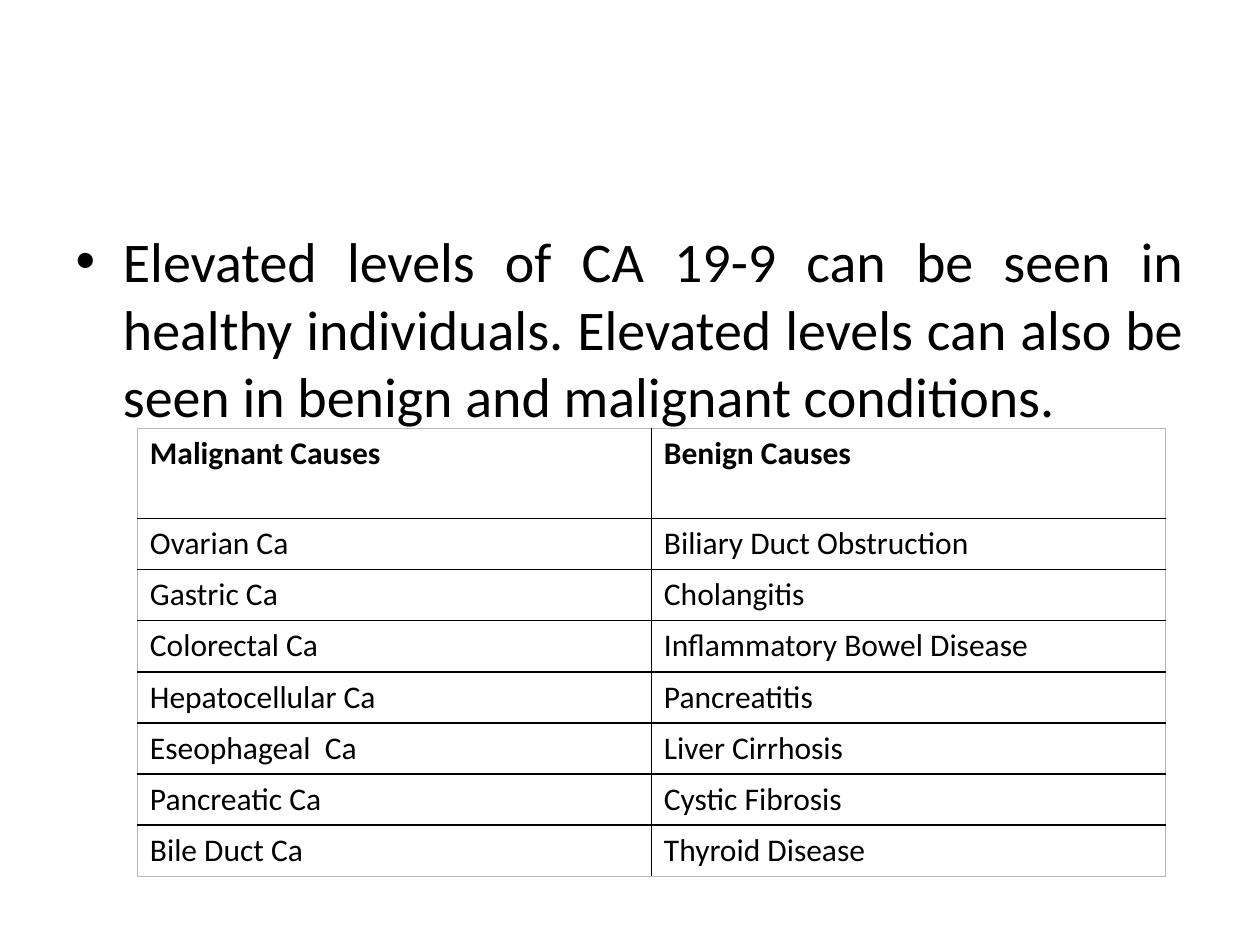
from lxml import etree
from pptx import Presentation
from pptx.dml.color import RGBColor
from pptx.enum.text import MSO_ANCHOR, PP_ALIGN
from pptx.oxml.ns import qn
from pptx.util import Pt

JUSTIFY = PP_ALIGN.JUSTIFY
TOP = MSO_ANCHOR.TOP
COLORS = {"text": "000000", "rule": "000000", "frame": "B8B8B8", "page": "FFFFFF"}
CAUSES = [
    ("Malignant Causes", "Benign Causes"),
    ("Ovarian Ca", "Biliary Duct Obstruction"),
    ("Gastric Ca", "Cholangitis"),
    ("Colorectal Ca", "Inflammatory Bowel Disease"),
    ("Hepatocellular Ca", "Pancreatitis"),
    ("Eseophageal  Ca", "Liver Cirrhosis"),
    ("Pancreatic Ca", "Cystic Fibrosis"),
    ("Bile Duct Ca", "Thyroid Disease"),
]


class SlideBuilder:
    font = "Calibri"

    def __init__(self, prs):
        self.s = prs.slides.add_slide(prs.slide_layouts[1])
        title = self.s.shapes.title
        title.element.getparent().remove(title.element)

    def add_text(self, tf, text, size, bold=False):
        p = tf.paragraphs[0]
        r = p.add_run()
        r.text = text
        formats = {"name": self.font, "size": Pt(size), "bold": bold}
        for name, value in formats.items():
            setattr(r.font, name, value)
        r.font.color.rgb = RGBColor.from_string(COLORS["text"])
        return p

    def body(self, text, box, size):
        sp = self.s.placeholders[1]
        for name, value in zip(("left", "top", "width", "height"), box):
            setattr(sp, name, Pt(value))
        self.add_text(sp.text_frame, text, size).alignment = JUSTIFY

    def border(self, cell, side, color, width):
        ln = etree.SubElement(cell._tc.get_or_add_tcPr(), qn(f"a:ln{side}"), w=str(Pt(width)))
        fill = etree.SubElement(ln, qn("a:solidFill"))
        etree.SubElement(fill, qn("a:srgbClr"), val=COLORS[color])

    def table(self, rows, box, header_height, size):
        left, top, width, height = box
        n_rows, n_cols = len(rows), len(rows[0])
        table = self.s.shapes.add_table(n_rows, n_cols, *map(Pt, box)).table
        table.first_row = table.horz_banding = False
        for column in table.columns:
            column.width = Pt(width / n_cols)
        row_height = (height - header_height) / (n_rows - 1)
        for i, texts in enumerate(rows):
            table.rows[i].height = Pt(row_height if i else header_height)
            for j, text in enumerate(texts):
                cell = table.cell(i, j)
                outer = {"L": j == 0, "R": j == n_cols - 1, "T": i == 0, "B": i == n_rows - 1}
                for side, is_outer in outer.items():
                    self.border(cell, side, *(("frame", 0.5) if is_outer else ("rule", 1)))
                cell.fill.solid()
                cell.fill.fore_color.rgb = RGBColor.from_string(COLORS["page"])
                cell.vertical_anchor = TOP
                self.add_text(cell.text_frame, text, size, bold=i == 0)


def main():
    prs = Presentation()
    prs.slide_width, prs.slide_height = Pt(720), Pt(540)
    slide = SlideBuilder(prs)
    slide.body(
        "Elevated levels of CA 19-9 can be seen in healthy individuals. "
        "Elevated levels can also be seen in benign and malignant conditions.",
        (36, 126, 648, 356.4), 32)
    slide.table(CAUSES, (78.5, 244.8, 587.5, 256), 51.4, 18)
    prs.save("out.pptx")


if __name__ == "__main__":
    main()
